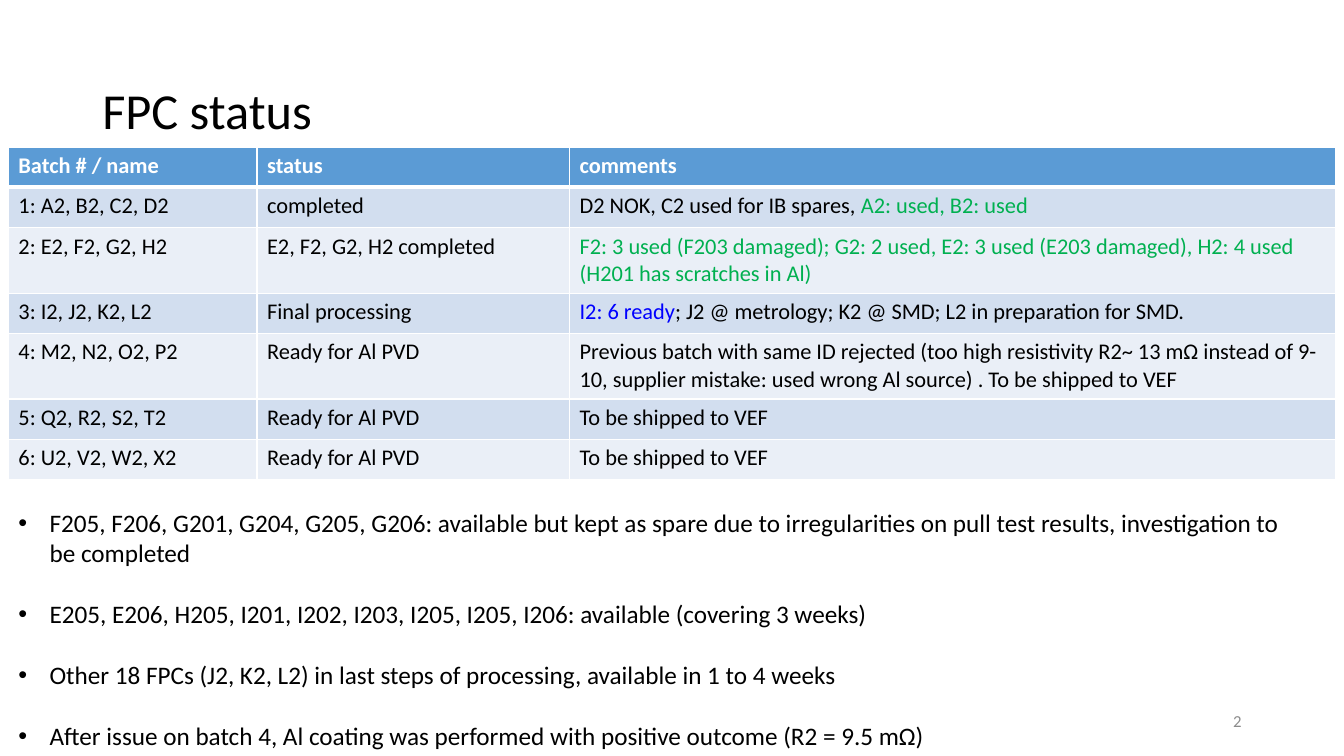
import collections

import lxml.etree
import pptx
import pptx.dml.color
import pptx.enum.text
import pptx.oxml.ns
import pptx.util

RGBColor = pptx.dml.color.RGBColor
BLACK = RGBColor(0x00, 0x00, 0x00)
WHITE = RGBColor(0xFF, 0xFF, 0xFF)
GREY = RGBColor(0x8C, 0x8C, 0x8C)
GREEN = RGBColor(0x00, 0xB0, 0x50)
BLUE = RGBColor(0x00, 0x00, 0xFF)
HEADER_BLUE = RGBColor(0x5B, 0x9B, 0xD5)
BAND_DARK = RGBColor(0xD2, 0xDE, 0xEF)
BAND_LIGHT = RGBColor(0xEA, 0xEF, 0xF7)

FONT = "Calibri"
GRID_COLUMNS, GRID_ROWS = 160, 90
SLIDE_WIDTH = pptx.util.Inches(13.33)
SLIDE_HEIGHT = pptx.util.Inches(7.5)

Box = collections.namedtuple("Box", "left top width height")

BATCH_COLUMN_WEIGHTS = (29.6, 37.2, 91.2)
ONE_LINE, TWO_LINES = 8, 13
BATCH_HEADINGS = ("Batch # / name", "status", "comments")
BATCHES = [
    (ONE_LINE, "1: A2, B2, C2, D2", "completed",
     [("D2 NOK, C2 used for IB spares, ", BLACK), ("A2: used, B2: used", GREEN)]),
    (TWO_LINES, "2: E2, F2, G2, H2", "E2, F2, G2, H2 completed",
     [("F2: 3 used (F203 damaged); G2: 2 used, E2: 3 used (E203 damaged), "
       "H2: 4 used (H201 has scratches in Al)", GREEN)]),
    (ONE_LINE, "3: I2, J2, K2, L2", "Final processing",
     [("I2: 6 ready", BLUE),
      ("; J2 @ metrology; K2 @ SMD; L2 in preparation for SMD.", BLACK)]),
    (TWO_LINES, "4: M2, N2, O2, P2", "Ready for Al PVD",
     [("Previous batch with same ID rejected (too high resistivity R2~ 13 mΩ "
       "instead of 9-10, supplier mistake: used wrong Al source) . "
       "To be shipped to VEF", BLACK)]),
    (ONE_LINE, "5: Q2, R2, S2, T2", "Ready for Al PVD",
     [("To be shipped to VEF", BLACK)]),
    (ONE_LINE, "6: U2, V2, W2, X2", "Ready for Al PVD",
     [("To be shipped to VEF", BLACK)]),
]
AVAILABILITY = [
    "F205, F206, G201, G204, G205, G206: available but kept as spare due to "
    "irregularities on pull test results, investigation to be completed",
    "E205, E206, H205, I201, I202, I203, I205, I205, I206: available (covering 3 weeks)",
    "Other 18 FPCs (J2, K2, L2) in last steps of processing, available in 1 to 4 weeks",
    "After issue on batch 4, Al coating was performed with positive outcome (R2 = 9.5 mΩ)",
]


def grid_box(column, row, columns, rows):
    column_width = SLIDE_WIDTH / GRID_COLUMNS
    row_height = SLIDE_HEIGHT / GRID_ROWS
    return Box(int(column * column_width), int(row * row_height),
               int(columns * column_width), int(rows * row_height))


def add_run(paragraph, text, size, color, bold=False):
    run = paragraph.add_run()
    run.text = text
    run.font.name = FONT
    run.font.size = pptx.util.Pt(size)
    run.font.bold = bold
    run.font.color.rgb = color


def add_text_frame(slide, box, anchor):
    frame = slide.shapes.add_textbox(*box).text_frame
    frame.word_wrap = True
    frame.vertical_anchor = anchor
    return frame


def add_title(slide, box):
    frame = add_text_frame(slide, box, pptx.enum.text.MSO_ANCHOR.MIDDLE)
    heading = frame.paragraphs[0]
    heading.line_spacing = 0.9
    add_run(heading, "FPC status", 36, BLACK)


def add_slide_number(slide, box):
    frame = add_text_frame(slide, box, pptx.enum.text.MSO_ANCHOR.MIDDLE)
    number = frame.paragraphs[0]
    number.alignment = pptx.enum.text.PP_ALIGN.RIGHT
    add_run(number, "2", 12, GREY)


def set_borders(cell, widths):
    qn = pptx.oxml.ns.qn
    properties = cell._tc.get_or_add_tcPr()
    for position, (side, width) in enumerate(widths.items()):
        line = lxml.etree.Element(qn("a:" + side), w=str(pptx.util.Pt(width)))
        fill = lxml.etree.SubElement(line, qn("a:solidFill"))
        lxml.etree.SubElement(fill, qn("a:srgbClr"), val=str(WHITE))
        properties.insert(position, line)


def add_batch_table(slide, box):
    rows = [(ONE_LINE, [[(heading, WHITE)] for heading in BATCH_HEADINGS])]
    for lines, batch, status, comments in BATCHES:
        rows.append((lines, [[(batch, BLACK)], [(status, BLACK)], comments]))
    table = slide.shapes.add_table(len(rows), len(BATCH_HEADINGS), *box).table
    for column, weight in zip(table.columns, BATCH_COLUMN_WEIGHTS):
        column.width = int(box.width * weight / sum(BATCH_COLUMN_WEIGHTS))
    total_lines = sum(lines for lines, _ in rows)
    for index, (lines, contents) in enumerate(rows):
        table.rows[index].height = int(box.height * lines / total_lines)
        is_header = index == 0
        band = HEADER_BLUE if is_header else (BAND_LIGHT, BAND_DARK)[index % 2]
        borders = {"lnL": 1, "lnR": 1, "lnT": 3 if index == 1 else 1,
                   "lnB": 3 if is_header else 1}
        for cell, runs in zip(table.rows[index].cells, contents):
            cell.fill.solid()
            cell.fill.fore_color.rgb = band
            set_borders(cell, borders)
            for text, color in runs:
                add_run(cell.text_frame.paragraphs[0], text, 16, color, is_header)


def add_availability(slide, box):
    frame = add_text_frame(slide, box, pptx.enum.text.MSO_ANCHOR.TOP)
    indent = pptx.util.Inches(0.31)
    for index, point in enumerate(AVAILABILITY):
        paragraph = frame.add_paragraph() if index else frame.paragraphs[0]
        properties = paragraph._p.get_or_add_pPr()
        properties.set("marL", str(indent))
        properties.set("indent", str(-indent))
        qn = pptx.oxml.ns.qn
        lxml.etree.SubElement(properties, qn("a:buFont"), typeface="Arial")
        lxml.etree.SubElement(properties, qn("a:buChar"), char="•")
        if index:
            paragraph.space_before = pptx.util.Pt(22)
        add_run(paragraph, point, 18, BLACK)


def main():
    presentation = pptx.Presentation()
    presentation.slide_width = SLIDE_WIDTH
    presentation.slide_height = SLIDE_HEIGHT
    slide = presentation.slides.add_slide(presentation.slide_layouts[6])
    add_title(slide, grid_box(11, 4.8, 138, 17.4))
    add_slide_number(slide, grid_box(113, 83.4, 36, 4.8))
    add_batch_table(slide, grid_box(1, 17.5, 158, 39.6))
    add_availability(slide, grid_box(1, 59.8, 154.2, 30.2))
    presentation.save("out.pptx")


if __name__ == "__main__":
    main()
